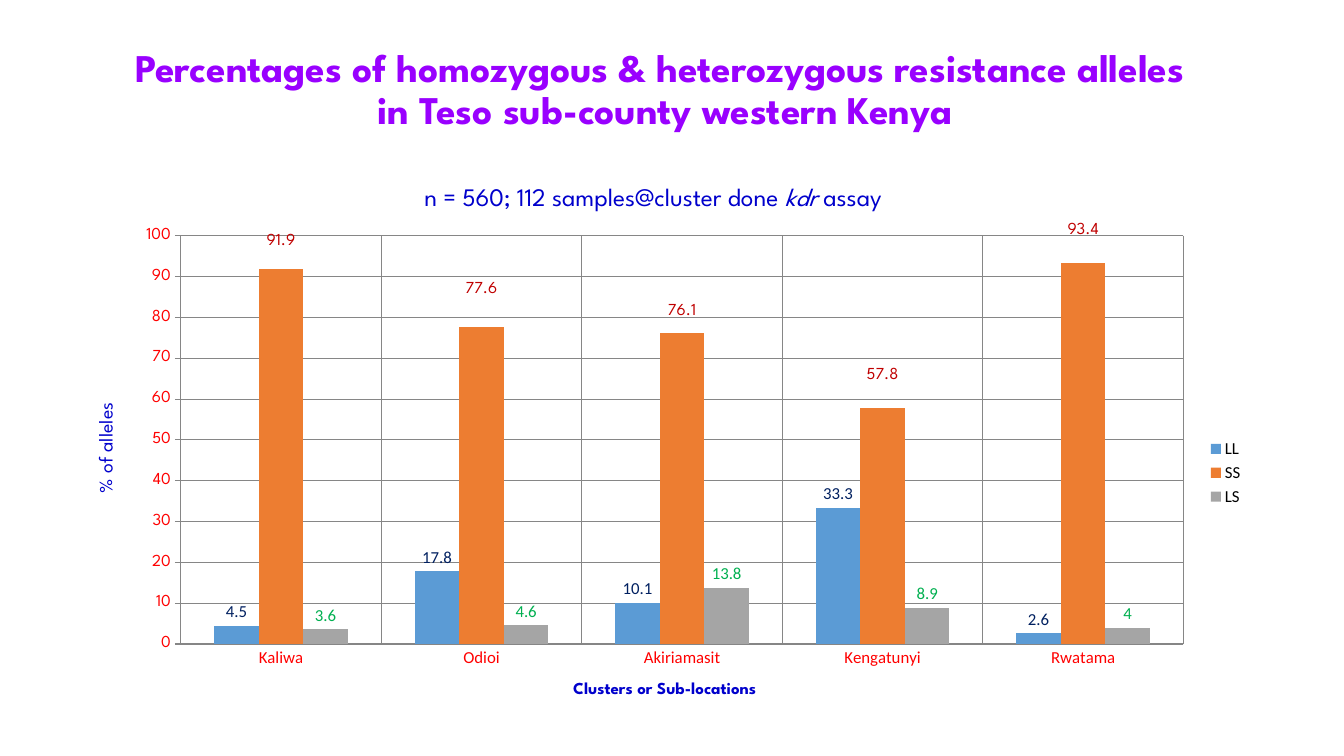
"""Build a slide charting resistance allele percentages by cluster."""
from lxml.etree import SubElement
from pptx import Presentation
from pptx.chart.data import CategoryChartData
from pptx.dml.color import RGBColor
from pptx.enum.chart import XL_CHART_TYPE, XL_LABEL_POSITION, XL_LEGEND_POSITION, XL_TICK_MARK
from pptx.enum.text import MSO_ANCHOR, MSO_AUTO_SIZE, PP_ALIGN
from pptx.oxml import parse_xml
from pptx.oxml.ns import nsdecls, qn
from pptx.util import Emu, Pt

EMU_PER_PX = 9144
HEADING_FONT = "League Spartan"
BODY_FONT = "Calibri"
BLUE = "0000CC"
RED = "FF0000"
GRID_GRAY = "868686"
CLUSTERS = ["Kaliwa", "Odioi", "Akiriamasit", "Kengatunyi", "Rwatama"]
ALLELES = [
    ("LL", [4.5, 17.8, 10.1, 33.3, 2.6], "5B9BD5", "002060", BODY_FONT),
    ("SS", [91.9, 77.6, 76.1, 57.8, 93.4], "ED7D31", "C00000", HEADING_FONT),
    ("LS", [3.6, 4.6, 13.8, 8.9, 4], "A5A5A5", "00B050", BODY_FONT),
]
SS_LABEL_SHIFTS = [-0.03, -0.05, -0.02, -0.04, -0.04]


def px(*lengths):
    """Turn pixel lengths into EMU."""
    return [Emu(length * EMU_PER_PX) for length in lengths]


def color(hex_string):
    """Turn a hex string into a colour."""
    return RGBColor.from_string(hex_string)


def style_font(font, size, hex_string, name=BODY_FONT, bold=False, italic=False):
    """Set the look of a font."""
    font.size = Pt(size)
    font.color.rgb = color(hex_string)
    font.name = name
    font.bold = bold
    font.italic = italic


def set_title(slide, text):
    """Place and format the title placeholder."""
    title = slide.shapes.title
    title.left, title.top, title.width, title.height = px(30, 12, 1259, 125)
    frame = title.text_frame
    frame.text = text
    frame.word_wrap = True
    frame.auto_size = MSO_AUTO_SIZE.NONE
    frame.vertical_anchor = MSO_ANCHOR.BOTTOM
    paragraph = frame.paragraphs[0]
    paragraph.alignment = PP_ALIGN.CENTER
    paragraph.line_spacing = 0.9
    for run in paragraph.runs:
        style_font(run.font, 28, "9900FF", HEADING_FONT, bold=True)


def add_sample_note(slide, parts):
    """Add the sample size line from text and italic pairs."""
    frame = slide.shapes.add_textbox(*px(411, 175, 562, 40)).text_frame
    frame.word_wrap = False
    frame.auto_size = MSO_AUTO_SIZE.SHAPE_TO_FIT_TEXT
    for text, italic in parts:
        run = frame.paragraphs[0].add_run()
        run.text = text
        style_font(run.font, 18, BLUE, HEADING_FONT, italic=italic)


def style_axis(axis, title, title_size, title_bold, label_font, tick_mark):
    """Format an axis with its title, labels and gridlines."""
    axis.has_title = True
    frame = axis.axis_title.text_frame
    frame.text = title
    style_font(frame.paragraphs[0].runs[0].font, title_size, BLUE, HEADING_FONT, title_bold)
    style_font(axis.tick_labels.font, 12, RED, label_font)
    axis.major_tick_mark = tick_mark
    axis.minor_tick_mark = XL_TICK_MARK.NONE
    axis.has_major_gridlines = True
    for line in (axis.format.line, axis.major_gridlines.format.line):
        line.color.rgb = color(GRID_GRAY)
        line.width = Pt(0.75)


def style_series(series, fill, label_color, label_font):
    """Format a series and its value labels."""
    series.format.fill.solid()
    series.format.fill.fore_color.rgb = color(fill)
    series.invert_if_negative = False
    labels = series.data_labels
    labels.show_value = True
    labels.position = XL_LABEL_POSITION.OUTSIDE_END
    style_font(labels.font, 12, label_color, label_font)
    for leader_lines in series._element.iter(qn("c:showLeaderLines")):
        leader_lines.set("val", "0")


def shift_labels(series, shifts, label_color, label_font):
    """Move each value label by a fraction of the chart height."""
    for index in range(len(shifts)):
        label = series.points[index].data_label
        style_font(label.font, 12, label_color, label_font)
        label.position = XL_LABEL_POSITION.OUTSIDE_END
    for element, shift in zip(series._element.iter(qn("c:dLbl")), shifts):
        layout = make_layout(x=0, y=shift)
        element.find(qn("c:idx")).addnext(layout)


def make_layout(**settings):
    """Build a manual chart layout element."""
    layout = parse_xml(f"<c:layout {nsdecls('c')}><c:manualLayout/></c:layout>")
    for name, value in settings.items():
        SubElement(layout[0], qn(f"c:{name}")).set("val", str(value))
    return layout


def place_plot_area(chart):
    """Fix the inner plot area within the chart."""
    plot_area = chart._chartSpace.chart.plotArea
    for layout in plot_area.findall(qn("c:layout")):
        plot_area.remove(layout)
    plot_area.insert(0, make_layout(layoutTarget="inner", xMode="edge", yMode="edge",
                                    x=0.09, y=0.03, w=0.85, h=0.81))


def add_allele_chart(slide):
    """Add the clustered column chart of allele percentages."""
    data = CategoryChartData()
    data.categories = CLUSTERS
    for name, values, *_ in ALLELES:
        data.add_series(name, values)
    chart = slide.shapes.add_chart(
        XL_CHART_TYPE.COLUMN_CLUSTERED, *px(74, 219, 1170, 500), data).chart
    style_font(chart.font, 10, "000000")
    chart.has_title = False
    chart.has_legend = True
    chart.legend.position = XL_LEGEND_POSITION.RIGHT
    chart.legend.include_in_layout = False
    style_font(chart.legend.font, 12, "000000")
    style_axis(chart.category_axis, "Clusters or Sub-locations", 12, True,
               BODY_FONT, XL_TICK_MARK.NONE)
    style_axis(chart.value_axis, "% of alleles", 14, False,
               HEADING_FONT, XL_TICK_MARK.OUTSIDE)
    chart.value_axis.minimum_scale = 0
    chart.value_axis.maximum_scale = 100
    chart.value_axis.major_unit = 10
    plot = chart.plots[0]
    plot.gap_width = 150
    plot.overlap = 0
    plot.vary_by_categories = False
    for series, (name, _, fill, label_color, label_font) in zip(plot.series, ALLELES):
        style_series(series, fill, label_color, label_font)
        if name == "SS":
            shift_labels(series, SS_LABEL_SHIFTS, label_color, label_font)
    place_plot_area(chart)


def main():
    """Build and save the slide."""
    presentation = Presentation()
    presentation.slide_width, presentation.slide_height = px(1333, 750)
    slide = presentation.slides.add_slide(presentation.slide_layouts[5])
    set_title(slide, "Percentages of homozygous & heterozygous resistance alleles \v"
                     "in Teso sub-county western Kenya")
    add_allele_chart(slide)
    add_sample_note(slide, [("n = 560; 112 samples@cluster done ", False),
                            ("kdr", True), (" assay", False)])
    presentation.save("out.pptx")


if __name__ == "__main__":
    main()
